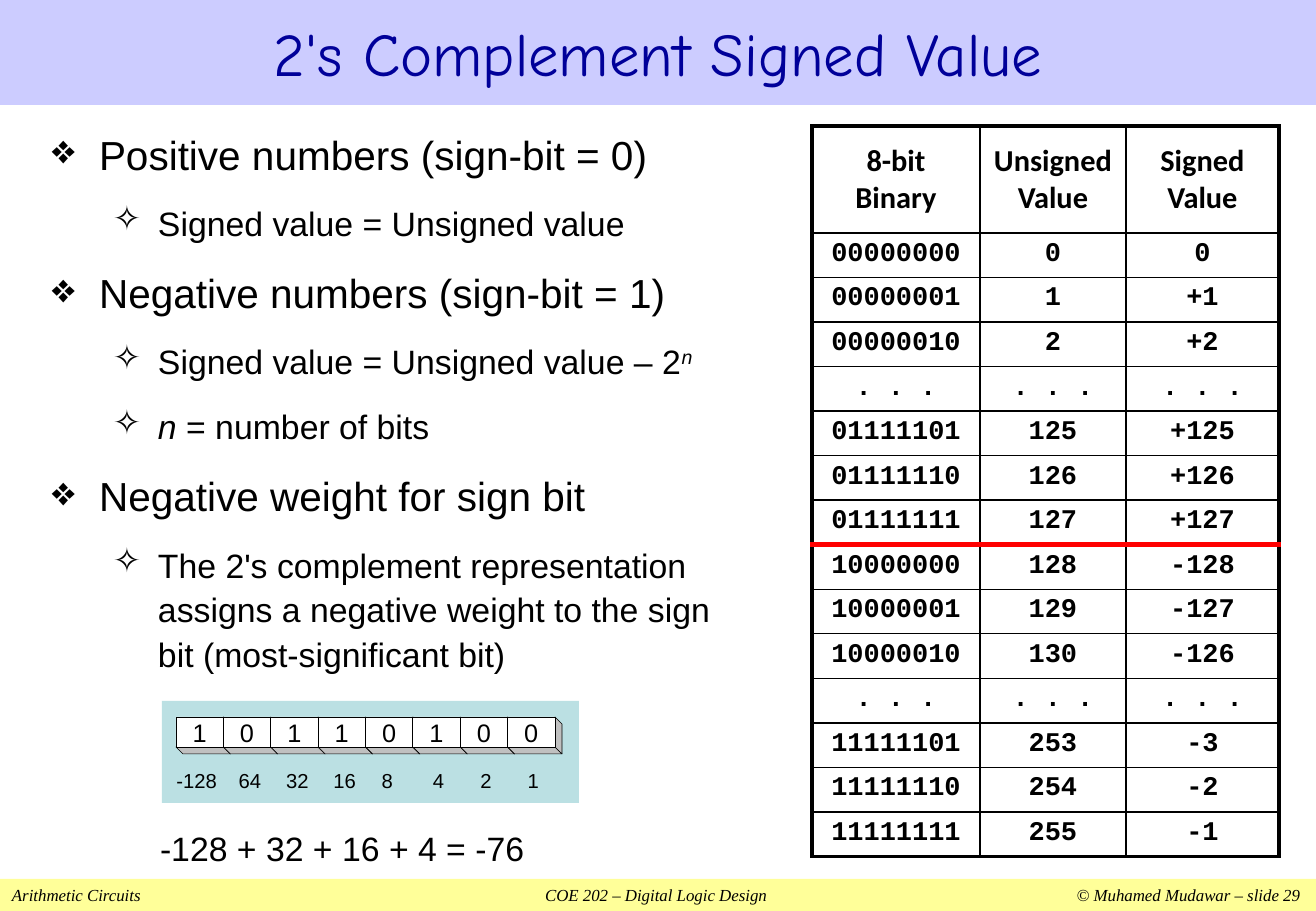
from lxml.etree import SubElement
from pptx import Presentation
from pptx.dml.color import RGBColor
from pptx.enum.shapes import MSO_SHAPE
from pptx.enum.text import MSO_ANCHOR, PP_ALIGN
from pptx.oxml.ns import qn
from pptx.util import Pt

RECTANGLE = MSO_SHAPE.RECTANGLE
MIDDLE, TOP = MSO_ANCHOR.MIDDLE, MSO_ANCHOR.TOP
CENTER, LEFT = PP_ALIGN.CENTER, PP_ALIGN.LEFT

BLACK = RGBColor(0, 0, 0)
WHITE = RGBColor(255, 255, 255)
NAVY = RGBColor(0, 0, 0x99)
LAVENDER = RGBColor(0xCC, 0xCC, 0xFF)
YELLOW = RGBColor(0xFF, 0xFF, 0x99)
TEAL = RGBColor(0xBB, 0xE0, 0xE3)
GRAY = RGBColor(0xC0, 0xC0, 0xC0)
RED = RGBColor(255, 0, 0)

EMU_PER_PX = 7526
PAGE_WIDTH, PAGE_HEIGHT = 1316, 911

TITLE_FONT = {"name": "Comic Neue", "size": Pt(36), "color": NAVY}
FOOTER_FONT = {"name": "Times New Roman", "size": Pt(10), "italic": True}
POINT_FONT = {"name": "Arial", "size": Pt(24)}
DETAIL_FONT = {"name": "Arial", "size": Pt(20)}
BIT_FONT = {"name": "Arial", "size": Pt(15)}
WEIGHT_FONT = {"name": "Arial", "size": Pt(12)}
HEADER_FONT = {"name": "Calibri", "size": Pt(18), "bold": True}
VALUE_FONT = {"name": "Courier New", "size": Pt(16), "bold": True}

# Bullet, left margin, hanging indent, level, font
POINT = ("❖", 47, 47, 0, POINT_FONT)
DETAIL = ("✧", 106, 45, 1, DETAIL_FONT)
RESULT = (None, 108, 0, 1, DETAIL_FONT)

# Style, space before in points, runs as (text, extra format)
BODY = [
    (POINT, 0, [("Positive numbers (sign-bit = 0)", {})]),
    (DETAIL, 12, [("Signed value = Unsigned value", {})]),
    (POINT, 12, [("Negative numbers (sign-bit = 1)", {})]),
    (DETAIL, 12, [("Signed value = Unsigned value – 2", {}),
                  ("n", {"italic": True, "baseline": 30000})]),
    (DETAIL, 12, [("n", {"italic": True}), (" = number of bits", {})]),
    (POINT, 12, [("Negative weight for sign bit", {})]),
    (DETAIL, 12, [("The 2's complement representation assigns a negative weight "
                   "to the sign bit (most-significant bit)", {})]),
    (RESULT, 88.7, [("-128 + 32 + 16 + 4 = -76", {})]),
]

# Bit, weight, shift of the weight from the middle of its cell
BITS = [("1", "-128", -3), ("0", "64", 3), ("1", "32", 3), ("1", "16", 3),
        ("0", "8", -2), ("1", "4", 2), ("0", "2", 2), ("0", "1", 2)]

GAP = (". . .",) * 3
VALUES = [
    ("8-bit\nBinary", "Unsigned\nValue", "Signed\nValue"),
    ("00000000", "0", "0"), ("00000001", "1", "+1"), ("00000010", "2", "+2"), GAP,
    ("01111101", "125", "+125"), ("01111110", "126", "+126"), ("01111111", "127", "+127"),
    ("10000000", "128", "-128"), ("10000001", "129", "-127"), ("10000010", "130", "-126"),
    GAP,
    ("11111101", "253", "-3"), ("11111110", "254", "-2"), ("11111111", "255", "-1"),
]
FIRST_NEGATIVE = 8


def px(*lengths):
    return [round(length * EMU_PER_PX) for length in lengths]


def apply(target, values):
    for name, value in values.items():
        setattr(target, name, value)


def add_run(para, text, font, extra=()):
    values = {"color": BLACK, **font, **dict(extra)}
    color, baseline = values.pop("color"), values.pop("baseline", None)
    span = para.add_run()
    span.text = text
    apply(span.font, values)
    span.font.color.rgb = color
    if baseline:
        span._r.get_or_add_rPr().set("baseline", str(baseline))


def set_frame(frame, margins=(0, 0, 0, 0), anchor=TOP, wrap=True):
    names = ("margin_left", "margin_top", "margin_right", "margin_bottom")
    apply(frame, {**dict(zip(names, px(*margins))),
                  "vertical_anchor": anchor, "word_wrap": wrap})


def paint(shape, fill, outlined=False):
    shape.shadow.inherit = False
    shape.fill.solid()
    shape.fill.fore_color.rgb = fill
    if outlined:
        shape.line.color.rgb = BLACK
        shape.line.width = Pt(0.38)
    else:
        shape.line.fill.background()


def add_title(page, box):
    title = page.shapes.title
    apply(title, dict(zip(("left", "top", "width", "height"), px(*box))))
    paint(title, LAVENDER)
    set_frame(title.text_frame, (12, 6, 12, 6), MIDDLE)
    para = title.text_frame.paragraphs[0]
    para.alignment = CENTER
    add_run(para, "2's Complement Signed Value", TITLE_FONT)


def add_footer(page, box):
    bar = page.shapes.add_shape(RECTANGLE, *px(*box))
    paint(bar, YELLOW)
    set_frame(bar.text_frame, (12, 0, 12, 0), MIDDLE)
    para = bar.text_frame.paragraphs[0]
    para.alignment = LEFT
    tabs = SubElement(para._p.get_or_add_pPr(), qn("a:tabLst"))
    for position, side in zip(px(644, 1288), ("ctr", "r")):
        SubElement(tabs, qn("a:tab"), pos=str(position), algn=side)
    add_run(para, "Arithmetic Circuits\tCOE 202 – Digital Logic Design\t"
                  "© Muhamed Mudawar – slide 29", FOOTER_FONT)


def add_body(page, box):
    frame = page.shapes.add_textbox(*px(*box)).text_frame
    set_frame(frame, (0, 6, 0, 6))
    for index, (style, before, runs) in enumerate(BODY):
        bullet, margin, hanging, level, font = style
        para = frame.add_paragraph() if index else frame.paragraphs[0]
        properties = para._p.get_or_add_pPr()
        properties.set("marL", str(px(margin)[0]))
        properties.set("indent", str(px(-hanging)[0]))
        if bullet:
            SubElement(properties, qn("a:buChar"), char=bullet)
        apply(para, {"level": level, "line_spacing": 1.1, "space_before": Pt(before)})
        for text, extra in runs:
            add_run(para, text, font, extra)


def add_bit_strip(page, box):
    """Row of raised bit cells with the weight of each bit below it."""
    left, top, _, _ = box
    shapes = page.shapes.add_group_shape().shapes
    paint(shapes.add_shape(RECTANGLE, *px(*box)), TEAL)
    pitch, depth = 379 / len(BITS), 7
    y, bottom = top + 16, top + 46
    for index, (bit, weight, shift) in enumerate(BITS):
        x = left + 14 + index * pitch
        right = x + pitch
        under = [(right, bottom), (x, bottom), (x + depth, bottom + depth),
                 (right + depth, bottom + depth)]
        side = [(right + depth, bottom + depth), (right, bottom), (right, y),
                (right + depth, y + depth)]
        for corners in (under, side):
            start, *others = [px(*corner) for corner in corners]
            builder = shapes.build_freeform(*start)
            builder.add_line_segments(others, close=True)
            paint(builder.convert_to_shape(), GRAY, outlined=True)
        face = shapes.add_shape(RECTANGLE, *px(x, y, pitch, bottom - y))
        paint(face, WHITE, outlined=True)
        label = shapes.add_textbox(*px(x + shift, top + 67, pitch, 24))
        for shape, text, font in ((face, bit, BIT_FONT), (label, weight, WEIGHT_FONT)):
            set_frame(shape.text_frame, anchor=MIDDLE, wrap=False)
            para = shape.text_frame.paragraphs[0]
            para.alignment = CENTER
            add_run(para, text, font)


def set_borders(cell, borders):
    properties = cell._tc.get_or_add_tcPr()
    for side, (color, points) in zip("LRTB", borders):
        line = SubElement(properties, qn(f"a:ln{side}"), w=str(Pt(points)))
        SubElement(SubElement(line, qn("a:solidFill")), qn("a:srgbClr"), val=str(color))


def add_value_table(page, box):
    rows, columns = len(VALUES), len(VALUES[0])
    table = page.shapes.add_table(rows, columns, *px(*box)).table
    apply(table, {"first_row": False, "horz_banding": False})
    for column, width in zip(table.columns, px(168, 146, 153)):
        column.width = width
    header, rest = px(107, box[3] - 107)
    thin, thick, divider = (BLACK, 1), (BLACK, 2.25), (RED, 3)
    edges = {0: thick, FIRST_NEGATIVE: divider, rows: thick}
    for r, values in enumerate(VALUES):
        table.rows[r].height = rest // (rows - 1) if r else header
        for c, value in enumerate(values):
            cell = table.cell(r, c)
            set_borders(cell, (thin if c else thick,
                               thin if c < columns - 1 else thick,
                               edges.get(r, thin), edges.get(r + 1, thin)))
            cell.fill.background()
            margins = ("margin_left", "margin_top", "margin_right", "margin_bottom")
            apply(cell, dict(zip(margins, px(13, 6, 13, 6))))
            cell.vertical_anchor = TOP if r else MIDDLE
            for index, text in enumerate(value.split("\n")):
                frame = cell.text_frame
                para = frame.add_paragraph() if index else frame.paragraphs[0]
                para.alignment = CENTER
                add_run(para, text, VALUE_FONT if r else HEADER_FONT)


def main():
    deck = Presentation()
    deck.slide_width, deck.slide_height = px(PAGE_WIDTH, PAGE_HEIGHT)
    page = deck.slides.add_slide(deck.slide_layouts[5])
    add_footer(page, (0, 879, PAGE_WIDTH, 32))
    add_title(page, (0, 0, PAGE_WIDTH, 105))
    add_body(page, (52, 119, 690, 750))
    add_bit_strip(page, (162, 701, 417, 102))
    add_value_table(page, (812, 126, 467, 731))
    deck.save("out.pptx")


if __name__ == "__main__":
    main()
